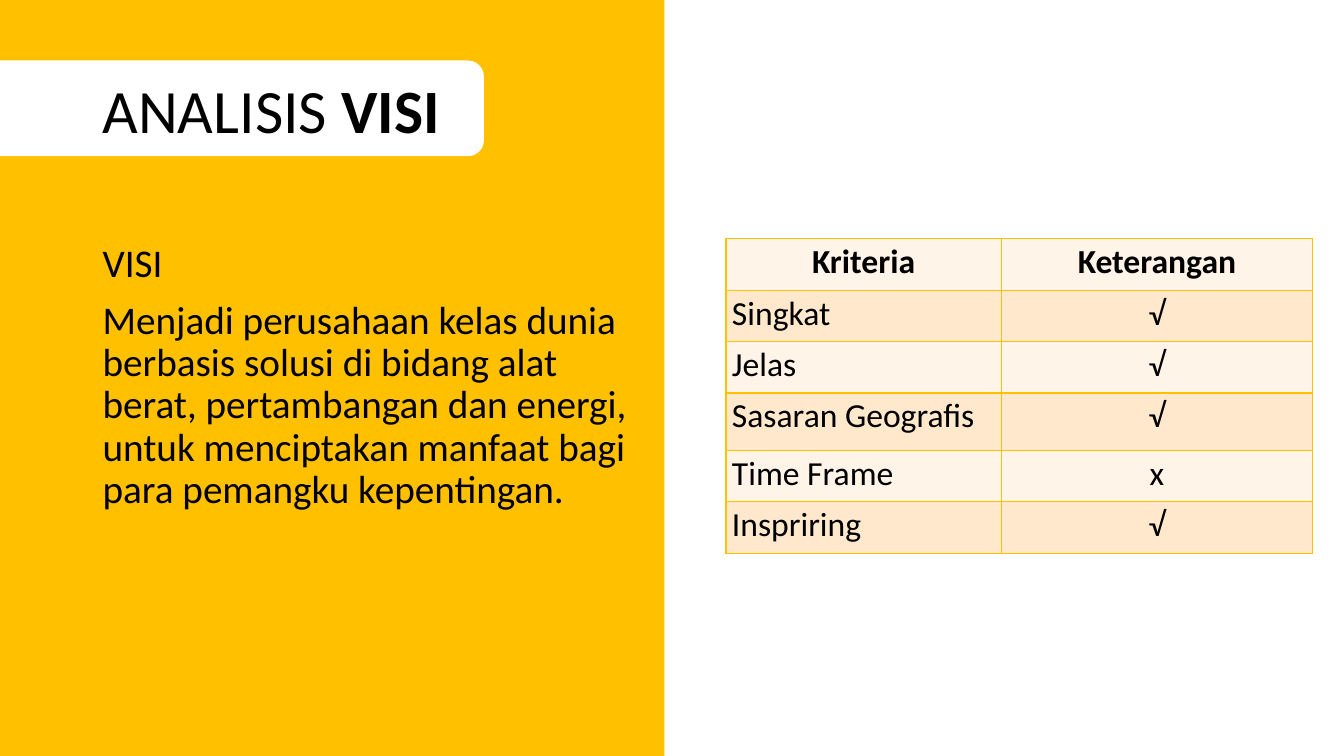
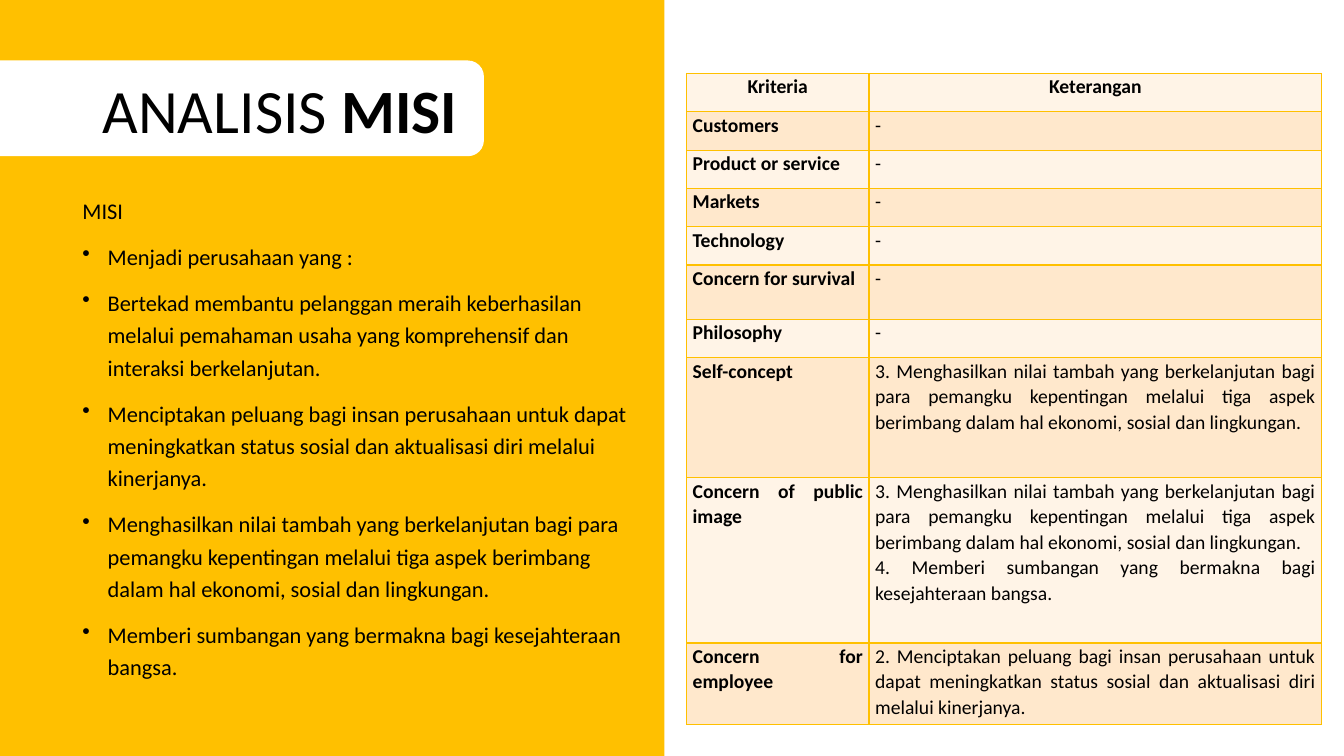
import pptx
import pptx.dml.color
import pptx.enum.shapes
import pptx.enum.text
import pptx.oxml.ns
import pptx.util
from lxml import etree

Inches = pptx.util.Inches
Pt = pptx.util.Pt
qn = pptx.oxml.ns.qn
Align = pptx.enum.text.PP_ALIGN
Shape = pptx.enum.shapes.MSO_SHAPE

HUES = {
    "gold": "FFC000",
    "white": "FFFFFF",
    "black": "000000",
    "pale": "FFF4E7",
    "peach": "FFE8CC",
}
FONT = "Calibri"

VISION = (
    "Menjadi perusahaan kelas dunia berbasis solusi di bidang alat berat, "
    "pertambangan dan energi, untuk menciptakan manfaat bagi para pemangku kepentingan."
)
GOALS = [
    "Bertekad membantu pelanggan meraih keberhasilan melalui pemahaman usaha "
    "yang komprehensif dan interaksi berkelanjutan.",
    "Menciptakan peluang bagi insan perusahaan untuk dapat meningkatkan status "
    "sosial dan aktualisasi diri melalui kinerjanya.",
    "Menghasilkan nilai tambah yang berkelanjutan bagi para pemangku kepentingan "
    "melalui tiga aspek berimbang dalam hal ekonomi, sosial dan lingkungan.",
    "Memberi sumbangan yang bermakna bagi kesejahteraan bangsa.",
]
HEAD = ("Kriteria", "Keterangan")


def goal(num):
    return f"{num}. {GOALS[num - 1]}"


class Deck:
    def __init__(self):
        self.show = pptx.Presentation()
        self.show.slide_width = Inches(13.33)
        self.show.slide_height = Inches(7.5)
        self.slide = None

    def hue(self, name):
        return pptx.dml.color.RGBColor.from_string(HUES[name])

    def page(self, word):
        self.slide = self.show.slides.add_slide(self.show.slide_layouts[6])
        self.block(Shape.RECTANGLE, (0, 0, 6.59, 7.5), "gold")
        self.block(Shape.ROUNDED_RECTANGLE, (-0.4, 0.6, 5.2, 0.95), "white")
        frame = self.text((0.92, 0.4, 11.5, 1.45), ["ANALISIS "], 44, 0.9)
        frame.vertical_anchor = pptx.enum.text.MSO_ANCHOR.MIDDLE
        run = frame.paragraphs[0].add_run()
        run.text = word
        self.style(run, 44, True)

    def block(self, kind, area, fill):
        shape = self.slide.shapes.add_shape(kind, *map(Inches, area))
        shape.shadow.inherit = False
        shape.fill.solid()
        shape.fill.fore_color.rgb = self.hue(fill)
        shape.line.fill.background()

    def style(self, run, size, bold=False):
        run.font.name = FONT
        run.font.size = Pt(size)
        run.font.bold = bold
        run.font.color.rgb = self.hue("black")

    def lines(self, frame, lines, size, space, bold=False, align=None):
        frame.text = "\n".join(lines)
        for para in frame.paragraphs:
            para.line_spacing = space
            para.alignment = align
            for run in para.runs:
                self.style(run, size, bold)

    def text(self, area, lines, size, space, gap=0):
        frame = self.slide.shapes.add_textbox(*map(Inches, area)).text_frame
        frame.word_wrap = True
        self.lines(frame, lines, size, space)
        for para in frame.paragraphs:
            para.space_before = Pt(gap)
        return frame

    def bullet(self, para):
        props = para._p.get_or_add_pPr()
        props.set("marL", str(Inches(0.25)))
        props.set("indent", str(Inches(-0.25)))
        etree.SubElement(props, qn("a:buChar")).set("char", "•")

    def border(self, cell):
        props = cell._tc.get_or_add_tcPr()
        for side in ("lnL", "lnR", "lnT", "lnB"):
            line = etree.SubElement(props, qn(f"a:{side}"), w=str(Pt(1)))
            fill = etree.SubElement(line, qn("a:solidFill"))
            etree.SubElement(fill, qn("a:srgbClr")).set("val", HUES["gold"])

    def grid(self, spot, wide, high, rows, size, label, align):
        area = (*spot, sum(wide), sum(high))
        frame = self.slide.shapes.add_table(len(rows), len(wide), *map(Inches, area))
        table = frame.table
        for col, width in zip(table.columns, wide):
            col.width = Inches(width)
        for row, height in zip(table.rows, high):
            row.height = Inches(height)
        for r, row in enumerate(rows):
            for c, words in enumerate(row):
                cell = table.cell(r, c)
                cell.margin_left = cell.margin_right = Inches(0.06)
                cell.margin_top = cell.margin_bottom = 0
                self.border(cell)
                cell.fill.solid()
                cell.fill.fore_color.rgb = self.hue("peach" if r % 2 else "pale")
                bold = r == 0 or (label and c == 0)
                side = Align.CENTER if r == 0 else (Align.JUSTIFY, align)[c]
                self.lines(cell.text_frame, words.split("\n"), size, 1.07, bold, side)


def vision(deck):
    deck.page("VISI")
    deck.text((0.92, 2.37, 5.67, 4.76), ["VISI", VISION], 28, 0.9, 10)
    rows = [
        HEAD,
        ("Singkat", "√"),
        ("Jelas", "√"),
        ("Sasaran Geografis", "√"),
        ("Time Frame", "x"),
        ("Inspriring", "√"),
    ]
    high = [0.51] * 3 + [0.57] + [0.51] * 2
    deck.grid((7.2, 2.37), (2.73, 3.09), high, rows, 24, False, Align.CENTER)


def mission(deck):
    deck.page("MISI")
    lines = ["MISI", "Menjadi perusahaan yang :", *GOALS]
    frame = deck.text((0.72, 1.85, 5.67, 4.76), lines, 16, 1.2, 10)
    for para in frame.paragraphs[1:]:
        deck.bullet(para)
    blank = ("Customers", "Product or service", "Markets", "Technology",
             "Concern for survival", "Philosophy")
    rows = [
        HEAD,
        *((name, "-") for name in blank),
        ("Self-concept", goal(3)),
        ("Concern of public image", goal(3) + "\n" + goal(4)),
        ("Concern for employee", goal(2)),
    ]
    high = [0.38] * 5 + [0.54, 0.38, 1.19, 1.64, 0.81]
    deck.grid((6.81, 0.73), (1.81, 4.49), high, rows, 14, True, Align.JUSTIFY)


def main():
    deck = Deck()
    vision(deck)
    mission(deck)
    deck.show.save("out.pptx")


if __name__ == "__main__":
    main()
